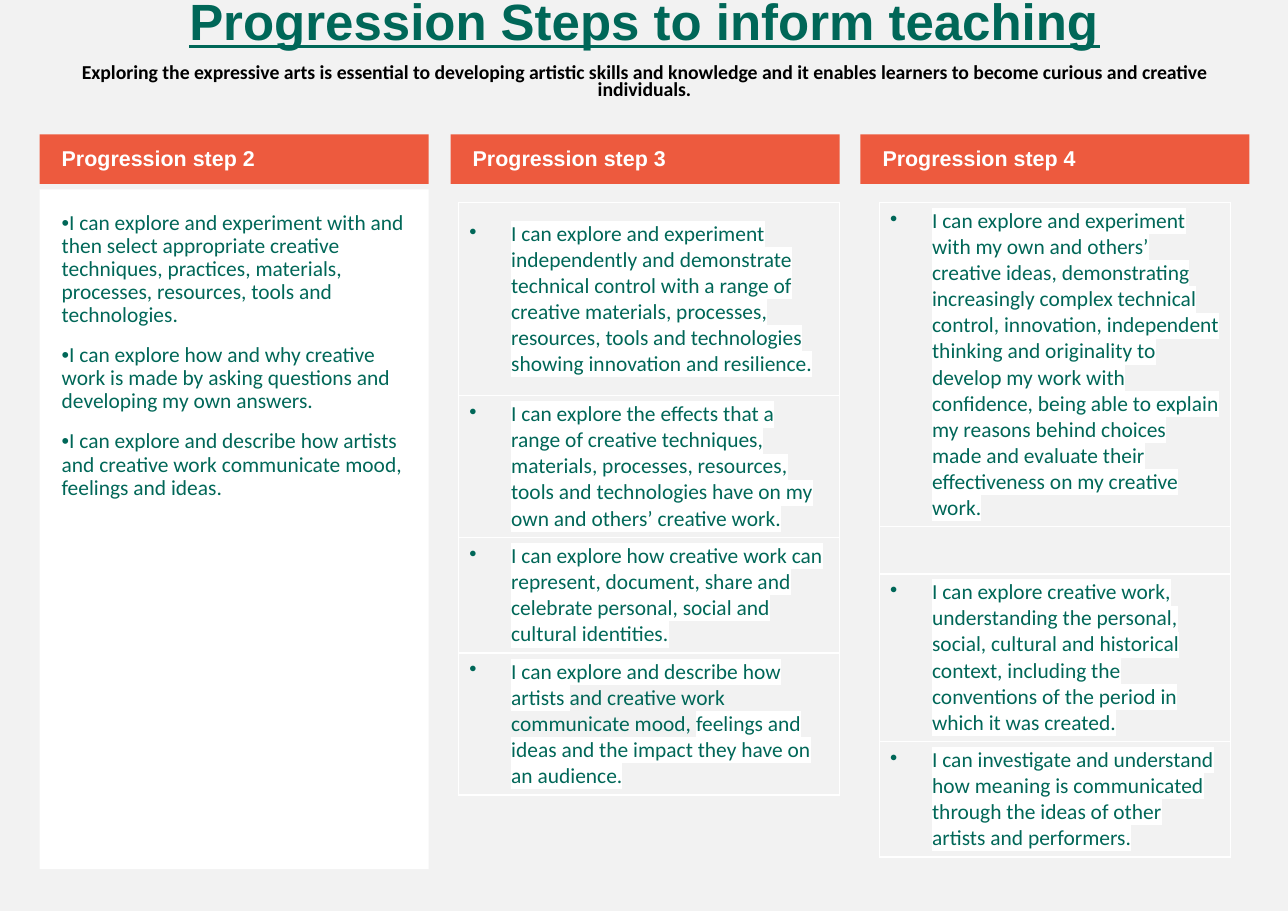
from dataclasses import dataclass

from lxml import etree
from pptx import Presentation
from pptx.dml.color import RGBColor
from pptx.enum.text import MSO_ANCHOR, MSO_AUTO_SIZE, PP_ALIGN
from pptx.oxml.ns import qn
from pptx.util import Inches, Pt

TOP, MIDDLE = MSO_ANCHOR.TOP, MSO_ANCHOR.MIDDLE
FIXED = MSO_AUTO_SIZE.NONE
LEFT, CENTER = PP_ALIGN.LEFT, PP_ALIGN.CENTER


@dataclass(frozen=True)
class Theme:
    page: str = "F2F2F2"
    white: str = "FFFFFF"
    black: str = "000000"
    green: str = "006758"
    orange: str = "ED5A3E"
    head: str = "Arial"
    body: str = "Calibri"
    title_size: float = 33.3
    intro_size: float = 12.9
    text_size: float = 14
    gap: float = 11


@dataclass(frozen=True)
class Style:
    font: str
    size: float
    color: str
    bold: bool = False
    under: bool = False


@dataclass(frozen=True)
class Box:
    left: float
    top: float
    width: float
    height: float


@dataclass(frozen=True)
class Phrase:
    text: str
    lit: bool = True


@dataclass(frozen=True)
class Row:
    height: float
    phrases: tuple[Phrase, ...] = ()


@dataclass(frozen=True)
class Grid:
    left: float
    top: float
    width: float
    rows: tuple[Row, ...]


THEME = Theme()
TITLE = Style(THEME.head, THEME.title_size, THEME.green, True, True)
INTRO = Style(THEME.body, THEME.intro_size, THEME.black, True)
LABEL = Style(THEME.head, THEME.text_size, THEME.white, True)
DOT = Style(THEME.head, THEME.text_size, THEME.green)
TEXT = Style(THEME.body, THEME.text_size, THEME.green)

COL_WIDTH = 3.53
STEPS = ((1, 0.36, "Progression step 2"), (3, 4.09, "Progression step 3"),
         (4, 7.81, "Progression step 4"))
GOALS = (
    "I can explore and experiment with and then select appropriate creative techniques, practices, materials, processes, resources, tools and technologies.",
    "I can explore how and why creative work is made by asking questions and developing my own answers.",
    "I can explore and describe how artists and creative work communicate mood, feelings and ideas.",
)
GRIDS = (
    Grid(4.16, 1.84, 3.46, (
        Row(1.75, (Phrase("I can explore and experiment independently and demonstrate technical control with a range of creative materials, processes, resources, tools and technologies showing innovation and resilience."),)),
        Row(1.29, (Phrase("I can explore the effects that a range of creative techniques, materials, processes, resources, tools and technologies have on my own and others’ creative work."),)),
        Row(1.04, (Phrase("I can explore how creative work can represent, document, share and celebrate personal, social and cultural identities."),)),
        Row(1.29, (Phrase("I can explore and describe how artists "),
                   Phrase("and creative work communicate mood, ", False),
                   Phrase("feelings and ideas and the impact they have on an audience."))),
    )),
    Grid(7.98, 1.84, 3.19, (
        Row(2.93, (Phrase("I can explore and experiment with my own and others’ creative ideas, demonstrating increasingly complex technical control, innovation, independent thinking and originality to develop my work with confidence, being able to explain my reasons behind choices made and evaluate their effectiveness on my creative work."),)),
        Row(0.43),
        Row(1.52, (Phrase("I can explore creative work, understanding the personal, social, cultural and historical context, including the conventions of the period in which it was created."),)),
        Row(1.05, (Phrase("I can investigate and understand how meaning is communicated through the ideas of other artists and performers."),)),
    )),
)


def add_run(para, text: str, style: Style):
    run = para.add_run()
    run.text = text
    font = run.font
    font.name, font.size = style.font, Pt(style.size)
    font.bold, font.underline = style.bold, style.under
    font.color.rgb = RGBColor.from_string(style.color)
    return run


def add_color(parent, tag: str, color: str):
    node = etree.SubElement(parent, qn(tag))
    etree.SubElement(node, qn("a:srgbClr"), val=color)
    return node


def light(run) -> None:
    """Put a white highlight behind a run."""
    props = run._r.get_or_add_rPr()
    mark = add_color(props, "a:highlight", THEME.white)
    props.find(qn("a:solidFill")).addnext(mark)


def set_indent(para, left: float, first: float, mark: str = "") -> None:
    """Set the indents and either a bullet or none."""
    props = para._p.get_or_add_pPr()
    props.set("marL", str(Inches(left)))
    props.set("indent", str(Inches(first)))
    if mark:
        etree.SubElement(props, qn("a:buChar"), char=mark)
    else:
        etree.SubElement(props, qn("a:buNone"))


def place(shape, box: Box, anchor, pads: tuple[float, ...]):
    """Move a placeholder and return its text frame."""
    shape.left, shape.top = Inches(box.left), Inches(box.top)
    shape.width, shape.height = Inches(box.width), Inches(box.height)
    frame = shape.text_frame
    frame.auto_size, frame.word_wrap = FIXED, True
    frame.vertical_anchor = anchor
    (frame.margin_left, frame.margin_top, frame.margin_right,
     frame.margin_bottom) = map(Inches, pads)
    return frame


def paint(fill, color: str) -> None:
    fill.solid()
    fill.fore_color.rgb = RGBColor.from_string(color)


def write(frame, paras, space: float, align) -> None:
    """Write paragraphs, each a list of text and style pairs."""
    for i, runs in enumerate(paras):
        para = frame.add_paragraph() if i else frame.paragraphs[0]
        para.alignment, para.line_spacing = align, space
        para.space_before = Pt(THEME.gap)
        set_indent(para, 0, 0)
        for text, style in runs:
            add_run(para, text, style)


def format_cell(cell) -> None:
    props = cell._tc.get_or_add_tcPr()
    for side in ("a:lnL", "a:lnR", "a:lnT", "a:lnB"):
        line = etree.SubElement(props, qn(side), w=str(Pt(1)))
        add_color(line, "a:solidFill", THEME.white)
    cell.fill.background()
    cell.vertical_anchor = MIDDLE


def draw_grid(slide, grid: Grid) -> None:
    height = sum(row.height for row in grid.rows)
    table = slide.shapes.add_table(
        len(grid.rows), 1, Inches(grid.left), Inches(grid.top),
        Inches(grid.width), Inches(height)).table
    table.first_row = table.horz_banding = False
    for i, row in enumerate(grid.rows):
        table.rows[i].height = Inches(row.height)
        cell = table.cell(i, 0)
        format_cell(cell)
        if row.phrases:
            para = cell.text_frame.paragraphs[0]
            set_indent(para, 0.38, -0.38, "•")
            for phrase in row.phrases:
                run = add_run(para, phrase.text, TEXT)
                if phrase.lit:
                    light(run)


def main() -> None:
    deck = Presentation()
    deck.slide_width, deck.slide_height = Inches(11.69), Inches(8.27)
    slide = deck.slides.add_slide(deck.slide_layouts.get_by_name("Comparison"))
    paint(slide.background.fill, THEME.page)
    holders = {item.placeholder_format.idx: item for item in slide.placeholders}

    frame = place(holders[0], Box(0.35, 0.01, 11, 1), TOP, (0.1, 0.05, 0.1, 0.05))
    write(frame, [
        [("Progression Steps to inform teaching", TITLE)],
        [("Exploring the expressive arts is essential to developing artistic skills and knowledge and it enables learners to become curious and creative individuals.", INTRO)],
    ], 0.7, CENTER)

    paint(holders[2].fill, THEME.white)
    frame = place(holders[2], Box(0.36, 1.72, COL_WIDTH, 6.17), TOP, (0.2,) * 4)
    write(frame, [[("•", DOT), (goal, TEXT)] for goal in GOALS], 0.9, LEFT)

    for key, left, label in STEPS:
        paint(holders[key].fill, THEME.orange)
        frame = place(holders[key], Box(left, 1.22, COL_WIDTH, 0.45), MIDDLE,
                      (0.2, 0.05, 0.1, 0.05))
        write(frame, [[(label, LABEL)]], 0.9, LEFT)

    for grid in GRIDS:
        draw_grid(slide, grid)
    deck.save("out.pptx")


if __name__ == "__main__":
    main()
